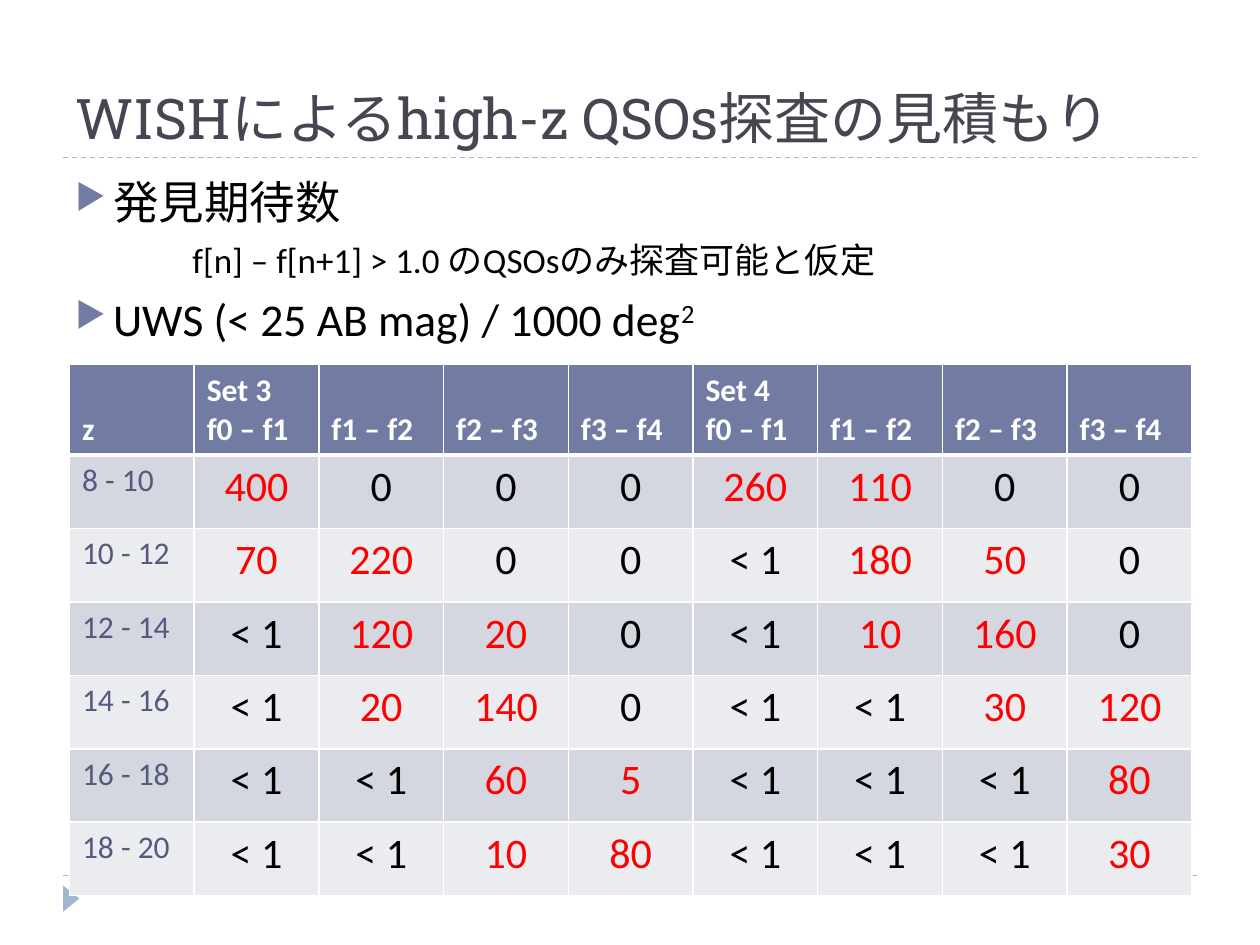
from lxml import etree
from pptx import Presentation
from pptx.dml.color import RGBColor
from pptx.enum.dml import MSO_LINE
from pptx.enum.shapes import MSO_CONNECTOR, MSO_SHAPE
from pptx.enum.text import MSO_ANCHOR, PP_ALIGN
from pptx.oxml.ns import qn
from pptx.util import Cm, Pt

INDIGO, PALE_BLUE, WHITE, BLACK = "727CA3", "9FB8CD", "FFFFFF", "000000"
BANDS = ("D5D7E0", "EBECF0")

FILTERS = ["f1 – f2", "f2 – f3", "f3 – f4"]
HEADER = ["z", "Set 3\nf0 – f1", *FILTERS, "Set 4\nf0 – f1", *FILTERS]
COUNTS = [
    ["8 - 10", "400", "0", "0", "0", "260", "110", "0", "0"],
    ["10 - 12", "70", "220", "0", "0", "< 1", "180", "50", "0"],
    ["12 - 14", "< 1", "120", "20", "0", "< 1", "10", "160", "0"],
    ["14 - 16", "< 1", "20", "140", "0", "< 1", "< 1", "30", "120"],
    ["16 - 18", "< 1", "< 1", "60", "5", "< 1", "< 1", "< 1", "80"],
    ["18 - 20", "< 1", "< 1", "10", "80", "< 1", "< 1", "< 1", "30"],
]


def color(value):
    return RGBColor.from_string(value)


def add_child(parent, tag, **attributes):
    return etree.SubElement(parent, qn(tag), attributes)


def set_font(para, size, value, name="Calibri", bold=False):
    font = para.font
    font.name, font.size, font.bold = name, Pt(size), bold
    font.color.rgb = color(value)


def add_rule(page, left, top, width):
    rule = page.shapes.add_connector(
        MSO_CONNECTOR.STRAIGHT, Cm(left), Cm(top), Cm(left + width), Cm(top))
    rule.line.color.rgb = color(PALE_BLUE)
    rule.line.width = Pt(0.75)
    rule.line.dash_style = MSO_LINE.DASH
    add_child(rule._element.spPr, "a:effectLst")


def add_frame(page, left, top, width, height):
    # Dashed rules above and below the content
    add_rule(page, left, top, width)
    add_rule(page, left, top + height, width)
    # Corner marker under the lower rule
    marker = page.shapes.add_shape(
        MSO_SHAPE.ISOSCELES_TRIANGLE,
        Cm(left - 0.1), Cm(top + height + 0.3), Cm(0.53), Cm(0.33))
    marker.rotation = 90
    marker.shadow.inherit = False
    marker.fill.solid()
    marker.fill.fore_color.rgb = color(PALE_BLUE)
    marker.line.fill.background()


def place_title(page, left, top, width, height):
    title = page.shapes.title
    title.left, title.top = Cm(left), Cm(top)
    title.width, title.height = Cm(width), Cm(height)
    title.text_frame.text = "WISHによるhigh-z QSOs探査の見積もり"
    title.text_frame.vertical_anchor = MSO_ANCHOR.BOTTOM
    para = title.text_frame.paragraphs[0]
    para.alignment = PP_ALIGN.LEFT
    set_font(para, 32, "464653", "Roboto Slab")


def set_bullet(para):
    props = para._p.get_or_add_pPr()
    props.set("marL", str(Cm(0.76)))
    props.set("indent", str(-Cm(0.76)))
    add_child(add_child(props, "a:buClr"), "a:srgbClr", val=INDIGO)
    add_child(props, "a:buSzPct", val="76000")
    add_child(props, "a:buChar", char="▶")


def add_summary(page, left, top, width, height):
    box = page.shapes.add_textbox(Cm(left), Cm(top), Cm(width), Cm(height))
    frame = box.text_frame
    frame.word_wrap = True
    frame.text = "\n".join([
        "発見期待数",
        "f[n] – f[n+1] > 1.0 のQSOsのみ探査可能と仮定",
        "UWS (< 25 AB mag) / 1000 deg",
    ])
    heading, condition, survey = frame.paragraphs
    for para in frame.paragraphs:
        para.space_before = Pt(6)
    for para in (heading, survey):
        set_bullet(para)
        set_font(para, 26, BLACK)
    condition._p.get_or_add_pPr().set("marL", str(Cm(2.36)))
    set_font(condition, 20, BLACK)
    exponent = survey.add_run()
    exponent.text = "2"
    exponent._r.get_or_add_rPr().set("baseline", "30000")


def set_borders(cell, top, bottom):
    props = cell._tc.get_or_add_tcPr()
    for side, width in (("L", 1), ("R", 1), ("T", top), ("B", bottom)):
        line = add_child(props, f"a:ln{side}", w=str(Pt(width)))
        add_child(add_child(line, "a:solidFill"), "a:srgbClr", val=WHITE)


def format_cell(cell, row, column):
    set_borders(cell, 3 if row == 1 else 1, 3 if row == 0 else 1)
    cell.fill.solid()
    cell.fill.fore_color.rgb = color(BANDS[(row - 1) % 2] if row else INDIGO)
    if row == 0:
        cell.vertical_anchor = MSO_ANCHOR.BOTTOM
    for para in cell.text_frame.paragraphs:
        if row == 0:
            set_font(para, 18, WHITE, bold=True)
        elif column == 0:
            set_font(para, 18, "525B7E")
        else:
            para.alignment = PP_ALIGN.CENTER
            set_font(para, 24, BLACK if para.text in ("0", "< 1") else "FF0000")


def add_counts(page, left, top, width, height):
    rows = [HEADER, *COUNTS]
    table = page.shapes.add_table(
        len(rows), len(HEADER), Cm(left), Cm(top), Cm(width), Cm(height)).table
    header_height = 1.83
    for column in table.columns:
        column.width = Cm(width / len(HEADER))
    for index, row in enumerate(table.rows):
        row.height = Cm((height - header_height) / len(COUNTS) if index else header_height)
    for row, values in enumerate(rows):
        for column, value in enumerate(values):
            cell = table.cell(row, column)
            cell.text = value
            format_cell(cell, row, column)


def main():
    deck = Presentation()
    deck.slide_width, deck.slide_height = Cm(25.4), Cm(19.05)
    page = deck.slides.add_slide(deck.slide_layouts[5])
    add_frame(page, 1.27, 3.17, 22.86, 14.48)
    place_title(page, 1.27, 0.43, 22.86, 2.74)
    add_summary(page, 1.27, 3.38, 22.86, 13.72)
    add_counts(page, 1.4, 7.34, 22.63, 10.72)
    deck.save("out.pptx")


if __name__ == "__main__":
    main()
